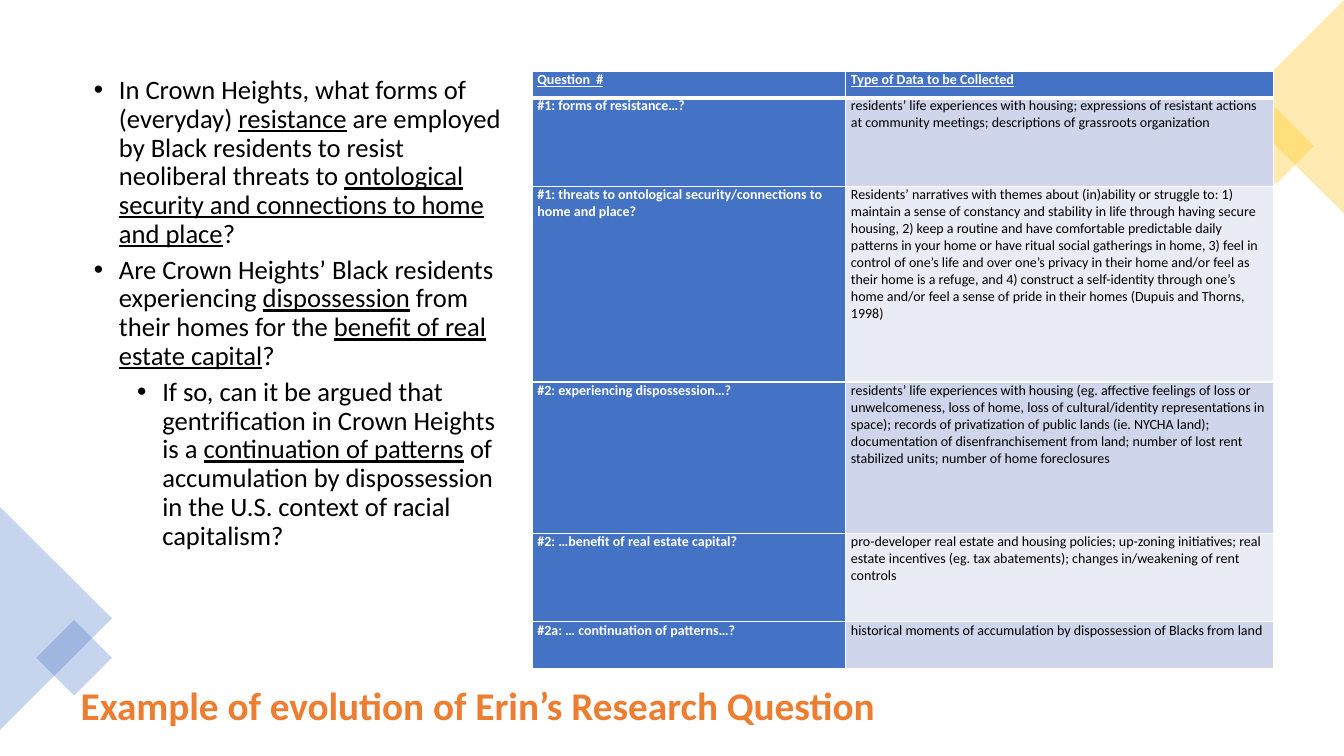
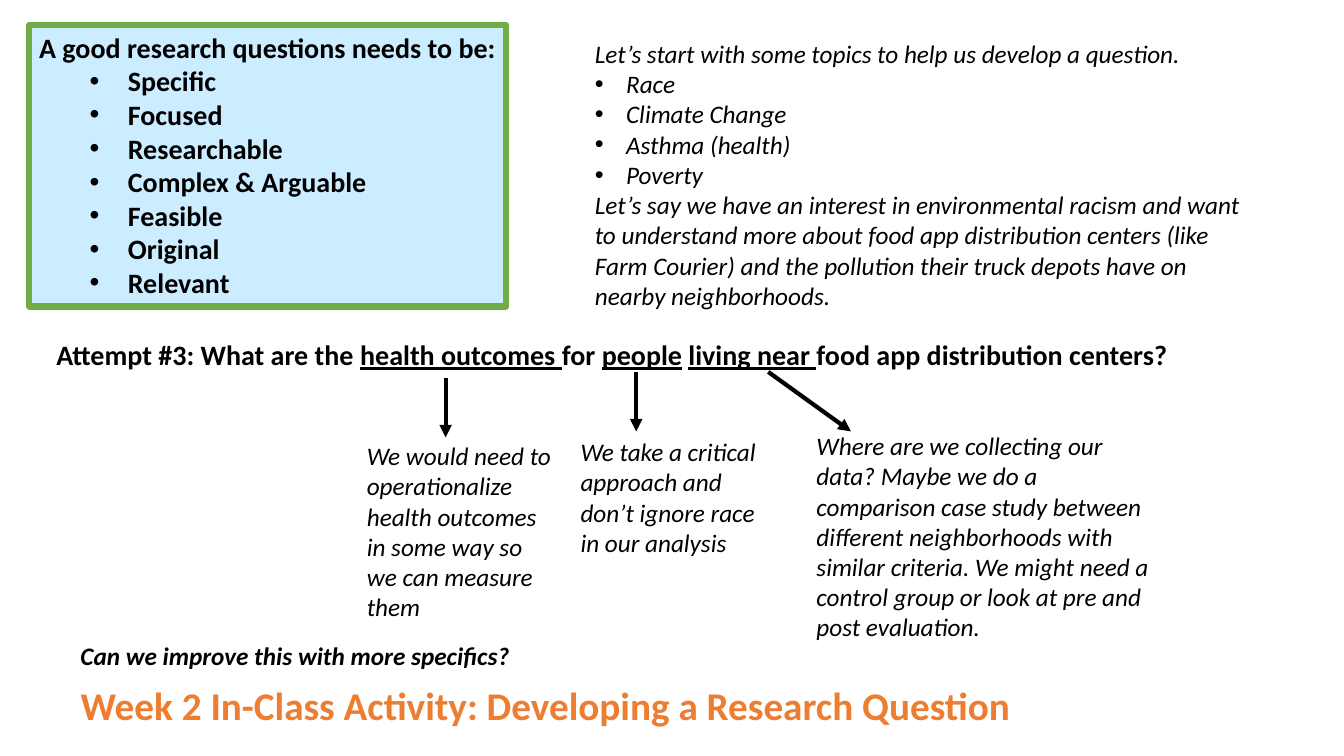
from lxml import etree
from pptx import Presentation
from pptx.dml.color import RGBColor
from pptx.enum import shapes, text
from pptx.oxml import ns
from pptx.util import Pt

PX = 9144  # EMU per px, 100 px to the inch
FONT = "Calibri"
C = {"title": "ED7D31", "text": "000000", "white": "FFFFFF", "blue": "4472C4",
     "gold": "FFC000", "band": "CFD5EA", "pale": "E9EBF5", "sky": "CCECFF", "green": "70AD47"}

# ---- Content: _..._ is underlined; a paragraph is (text, level, indent, hang), hang 0 = no bullet
TITLES = ["Example of evolution of Erin’s Research Question",
          "Week 2 In-Class Activity: Developing a Research Question"]
QUESTIONS = [
    ("In Crown Heights, what forms of (everyday) _resistance_ are employed by Black residents to "
     "resist neoliberal threats to _ontological security and connections to home and place_?", 0, 38, 25),
    ("Are Crown Heights’ Black residents experiencing _dispossession_ from their homes for the "
     "_benefit of real estate capital_?", 0, 38, 25),
    ("If so, can it be argued that gentrification in Crown Heights is a _continuation of patterns_ of "
     "accumulation by dispossession in the U.S. context of racial capitalism?", 1, 81, 25),
]
COLS = [311, 424]
ROWS = [  # height, question, data
    (26, "_Question  #_", "_Type of Data to be Collected_"),
    (88, "#1: forms of resistance…?",
     "residents’ life experiences with housing; expressions of resistant actions at community "
     "meetings; descriptions of grassroots organization"),
    (194, "#1: threats to ontological security/connections to home and place?",
     "Residents’ narratives with themes about (in)ability or struggle to: 1) maintain a sense of "
     "constancy and stability in life through having secure housing, 2) keep a routine and have "
     "comfortable predictable daily patterns in your home or have ritual social gatherings in home, "
     "3) feel in control of one’s life and over one’s privacy in their home and/or feel as their home "
     "is a refuge, and 4) construct a self-identity through one’s home and/or feel a sense of pride "
     "in their homes (Dupuis and Thorns, 1998)"),
    (150, "#2: experiencing dispossession…?",
     "residents’ life experiences with housing (eg. affective feelings of loss or unwelcomeness, loss "
     "of home, loss of cultural/identity representations in space); records of privatization of public "
     "lands (ie. NYCHA land); documentation of disenfranchisement from land; number of lost rent "
     "stabilized units; number of home foreclosures"),
    (88, "#2: …benefit of real estate capital?",
     "pro-developer real estate and housing policies; up-zoning initiatives; real estate incentives "
     "(eg. tax abatements); changes in/weakening of rent controls"),
    (46, "#2a: … continuation of patterns…?",
     "historical moments of accumulation by dispossession of Blacks from land"),
]
CORNERS = [  # shape, box, rotation, colour
    ("ISOSCELES_TRIANGLE", (-55, 558, 221, 111), 90, "blue"),
    ("RECTANGLE", (47, 626, 53, 53), 45, "blue"),
    ("RECTANGLE", (1238, 118, 54, 54), 45, "gold"),
    ("ISOSCELES_TRIANGLE", (1174, 53, 212, 106), 270, "gold"),
]
CRITERIA = [("A good research questions needs to be:", 0, 0, 0)] + [
    (name, 1, 88, 38) for name in ("Specific", "Focused", "Researchable", "Complex & Arguable",
                                   "Feasible", "Original", "Relevant")]
TOPICS = [
    ("Let’s start with some topics to help us develop a question.", 0, 0, 0),
    *[(name, 0, 31, 31) for name in ("Race", "Climate Change", "Asthma (health)", "Poverty")],
    ("Let’s say we have an interest in environmental racism and want to understand more about food "
     "app distribution centers (like Farm Courier) and the pollution their truck depots have on nearby "
     "neighborhoods.", 0, 0, 0),
]
NOTES = [  # box, text, size, bold, italic
    ((46, 330, 1201, 44), "Attempt #3: What are the _health outcomes _for _people_ _living near _food "
     "app distribution centers?", 20, True, False),
    ((354, 432, 207, 192), "We would need to operationalize health outcomes in some way so we can "
     "measure them", 18, False, True),
    ((566, 428, 207, 131), "We take a critical approach and don’t ignore race in our analysis",
     18, False, True),
    ((800, 422, 357, 222), "Where are we collecting our data? Maybe we do a comparison case study "
     "between different neighborhoods with similar criteria. We might need a control group or look at "
     "pre and post evaluation.", 18, False, True),
    ((70, 630, 667, 40), "Can we improve this with more specifics?", 18, True, True),
]
ARROWS = [(442, 375, 442, 434), (631, 369, 631, 428), (762, 369, 844, 428)]


# ---- Helpers
def emu(lengths):
    return [v * PX for v in lengths]


def rgb(name):
    return RGBColor.from_string(C[name])


def sub(parent, tag, **attrs):
    return etree.SubElement(parent, ns.qn(tag), attrs)


def add_runs(p, marked, size, color="text", bold=False, italic=False):
    for i, part in enumerate(marked.split("_")):
        if part:
            r = p.add_run()
            r.text = part
            f = r.font
            f.name, f.size, f.bold, f.italic, f.underline = FONT, Pt(size), bold, italic, i % 2 == 1
            f.color.rgb = rgb(color)


def write(sp, paras, size, spacing=1.0, after=0, **style):
    tf = sp.text_frame
    tf.word_wrap, tf.auto_size = True, text.MSO_AUTO_SIZE.NONE
    tf.vertical_anchor = text.MSO_ANCHOR.TOP
    for i, (marked, level, indent, hang) in enumerate(paras):
        p = tf.add_paragraph() if i else tf.paragraphs[0]
        p.level, p.alignment, p.line_spacing = level, text.PP_ALIGN.LEFT, spacing
        p.space_before, p.space_after = Pt(0), Pt(after)
        pPr = p._p.get_or_add_pPr()
        pPr.set("marL", str(indent * PX))
        pPr.set("indent", str(-hang * PX))
        if hang:
            sub(pPr, "a:buFont", typeface="Arial")
            sub(pPr, "a:buChar", char="•")
        else:
            sub(pPr, "a:buNone")
        add_runs(p, marked, size, **style)


def place(sp, box):
    sp.left, sp.top, sp.width, sp.height = emu(box)
    return sp


def new_slide(prs, title, body_box):
    s = prs.slides.add_slide(prs.slide_layouts[1])
    write(place(s.shapes.title, (70, 671, 946, 57)), [(title, 0, 0, 0)], 28, color="title", bold=True)
    return s, place(s.placeholders[1], body_box)


def add_shape(s, kind, box, fill):
    sp = s.shapes.add_shape(getattr(shapes.MSO_SHAPE, kind), *emu(box))
    sp.shadow.inherit = False
    sp.fill.solid()
    sp.fill.fore_color.rgb = rgb(fill)
    sp.line.fill.background()
    return sp


def add_corner(s, kind, box, rotation, color):
    sp = add_shape(s, kind, box, color)
    sp.rotation = rotation
    sub(sp._element.spPr.find(".//" + ns.qn("a:srgbClr")), "a:alpha", val="30000")


def add_arrow(s, ends):
    line = s.shapes.add_connector(shapes.MSO_CONNECTOR.STRAIGHT, *emu(ends))
    line.line.color.rgb, line.line.width = rgb("text"), Pt(3)
    sub(line.line._get_or_add_ln(), "a:tailEnd", type="triangle")
    sub(line._element.spPr, "a:effectLst")


def add_borders(cell, row):
    widths = {"L": 1, "R": 1, "T": 3 if row == 1 else 1, "B": 3 if row == 0 else 1}
    for side, width in widths.items():
        ln = sub(cell._tc.get_or_add_tcPr(), "a:ln" + side, w=str(Pt(width)))
        sub(sub(ln, "a:solidFill"), "a:srgbClr", val=C["white"])


def add_data_table(s, left, top):
    size = sum(COLS), sum(row[0] for row in ROWS)
    table = s.shapes.add_table(len(ROWS), len(COLS), *emu((left, top, *size))).table
    for c, width in enumerate(COLS):
        table.columns[c].width = width * PX
    for r, (height, *texts) in enumerate(ROWS):
        table.rows[r].height = height * PX
        for c, marked in enumerate(texts):
            cell, head = table.cell(r, c), r == 0 or c == 0
            cell.margin_left = cell.margin_right = 5 * PX
            cell.margin_top = cell.margin_bottom = 0
            add_borders(cell, r)
            cell.fill.solid()
            cell.fill.fore_color.rgb = rgb("blue" if head else "band" if r % 2 else "pale")
            add_runs(cell.text_frame.paragraphs[0], marked, 10, "white" if head else "text", head)


# ---- Slides
def main():
    prs = Presentation()
    prs.slide_width, prs.slide_height = emu((1333, 750))

    # Research questions and the data they need
    s, body = new_slide(prs, TITLES[0], (70, 71, 438, 604))
    write(body, QUESTIONS, 19, spacing=0.9, after=5.2)
    for corner in CORNERS:
        add_corner(s, *corner)
    add_data_table(s, 528, 71)

    # Class activity
    s, body = new_slide(prs, TITLES[1], (580, 33, 667, 283))
    write(body, TOPICS, 18, italic=True)
    criteria = add_shape(s, "RECTANGLE", (29, 25, 473, 279), "sky")
    criteria.line.color.rgb, criteria.line.width = rgb("green"), Pt(4.5)
    write(criteria, CRITERIA, 20, bold=True)
    for box, marked, size, bold, italic in NOTES:
        write(s.shapes.add_textbox(*emu(box)), [(marked, 0, 0, 0)], size, bold=bold, italic=italic)
    for ends in ARROWS:
        add_arrow(s, ends)

    prs.save("out.pptx")


if __name__ == "__main__":
    main()
